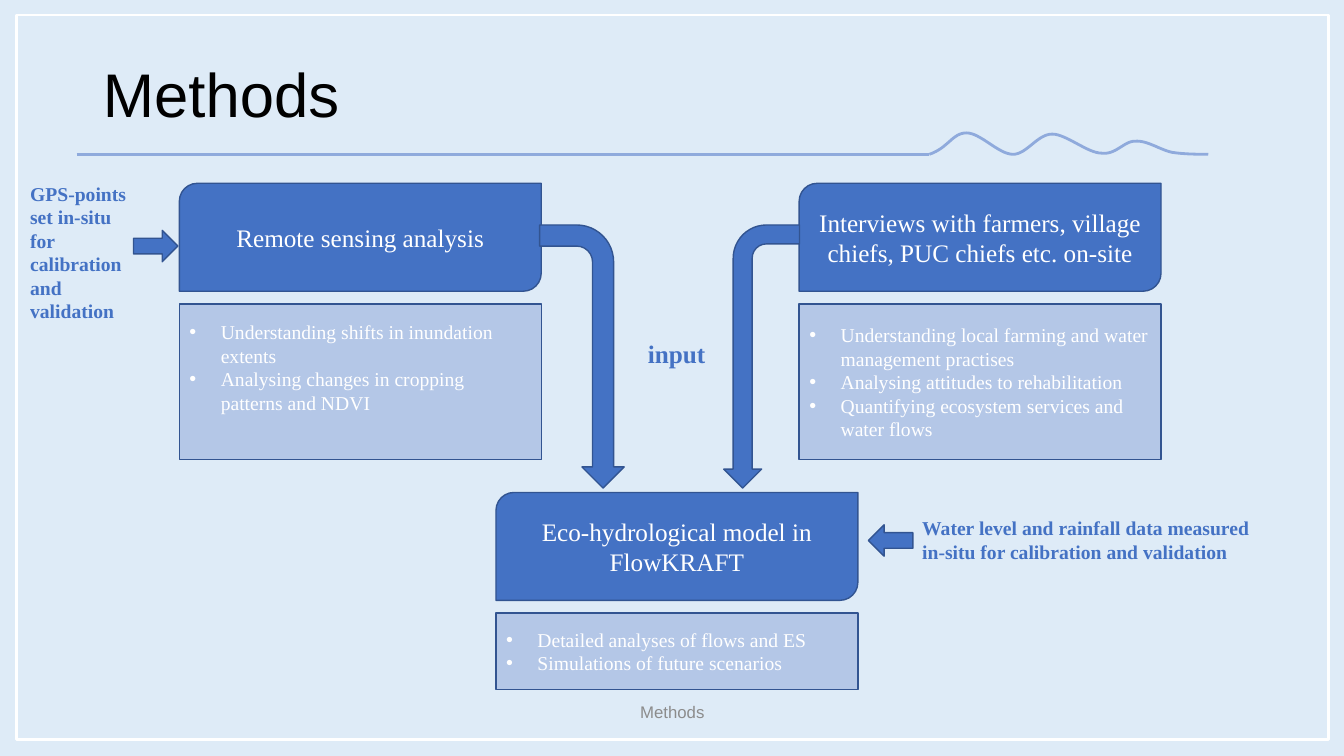
from dataclasses import dataclass

from lxml.etree import SubElement
from pptx import Presentation
from pptx.dml.color import RGBColor
from pptx.enum.shapes import MSO_CONNECTOR, MSO_SHAPE
from pptx.enum.text import MSO_ANCHOR, MSO_AUTO_SIZE, PP_ALIGN
from pptx.oxml.ns import qn
from pptx.util import Cm, Pt

PAPER = RGBColor(0xDE, 0xEB, 0xF7)
WHITE = RGBColor(0xFF, 0xFF, 0xFF)
BLACK = RGBColor(0x00, 0x00, 0x00)
GREY = RGBColor(0x8C, 0x8C, 0x8C)
BLUE = RGBColor(0x44, 0x72, 0xC4)
PALE = RGBColor(0xB4, 0xC7, 0xE7)
EDGE = RGBColor(0x32, 0x54, 0x91)
RULE = RGBColor(0x8F, 0xAA, 0xDC)
SERIF, SANS = "Times New Roman", "Arial"

BOX_W, BOX_H, STEP = 9.12, 2.72, 3.04  # STEP: from top of a box to its list
INDENT = Cm(0.79)


@dataclass
class Stage:
    left: float
    top: float
    name: str
    tall: float
    items: list[str]
    foot: float = 0.13  # bottom inset of the list


@dataclass
class Arrow:
    kind: MSO_SHAPE
    at: tuple[float, float, float, float]
    turn: int
    flip: bool = False


@dataclass
class Label:
    at: tuple[float, float, float, float]
    text: str
    size: int = 14
    font: str = SERIF
    color: RGBColor = BLUE
    bold: bool = True
    align: PP_ALIGN = PP_ALIGN.LEFT


STAGES = [
    Stage(4.52, 4.62, "Remote sensing analysis", 3.92,
          ["Understanding shifts in inundation extents",
           "Analysing changes in cropping patterns and NDVI"], foot=0.87),
    Stage(20.14, 4.62, "Interviews with farmers, village chiefs, PUC chiefs etc. on-site", 3.92,
          ["Understanding local farming and water management practises",
           "Analysing attitudes to rehabilitation",
           "Quantifying ecosystem services and water flows"]),
    Stage(12.5, 12.41, "Eco-hydrological model in FlowKRAFT", 1.93,
          ["Detailed analyses of flows and ES", "Simulations of future scenarios"]),
]
ARROWS = [
    Arrow(MSO_SHAPE.BENT_ARROW, (11.35, 7.92, 6.63, 2.13), 90),
    Arrow(MSO_SHAPE.BENT_ARROW, (15.88, 8.03, 6.63, 1.91), 90, flip=True),
    Arrow(MSO_SHAPE.DOWN_ARROW, (22.05, 13.06, 0.79, 1.12), 90),
    Arrow(MSO_SHAPE.DOWN_ARROW, (3.53, 5.64, 0.79, 1.12), 270),
]
LABELS = [
    Label((16.08, 8.41, 2.11, 1.02), "input", 18),
    Label((22.99, 12.88, 9.07, 2.06),
          "Water level and rainfall data measured in-situ for calibration and validation"),
    Label((0.51, 4.45, 3.02, 3.84), "GPS-points set in-situ for calibration and validation"),
    Label((11.23, 17.55, 11.43, 1.02), "Methods", 12, SANS, GREY, False, PP_ALIGN.CENTER),
]
# Start of the wave, then two control points and an end for each curve
WAVE = [
    (23.42, 3.89),
    (23.9, 3.73), (24.0, 3.35), (24.36, 3.35),
    (24.71, 3.35), (25.17, 3.89), (25.53, 3.89),
    (25.88, 3.89), (26.14, 3.38), (26.52, 3.38),
    (26.87, 3.38), (27.41, 3.86), (27.76, 3.86),
    (28.12, 3.91), (28.32, 3.56), (28.6, 3.56),
    (28.91, 3.53), (29.24, 3.78), (29.54, 3.84),
    (29.85, 3.89), (30.28, 3.89), (30.45, 3.89),
]


def write(frame, *lines: str, size: int = 18, font: str = SERIF, color: RGBColor = WHITE,
          bold: bool = False, align: PP_ALIGN = PP_ALIGN.LEFT,
          anchor: MSO_ANCHOR = MSO_ANCHOR.TOP, space: float = 1.0,
          bullet: bool = False) -> None:
    frame.word_wrap = True
    frame.auto_size = MSO_AUTO_SIZE.NONE
    frame.vertical_anchor = anchor
    for num, line in enumerate(lines):
        para = frame.add_paragraph() if num else frame.paragraphs[0]
        para.alignment = align
        para.line_spacing = space
        para.space_before = Pt(0)
        run = para.add_run()
        run.text = line
        run.font.size, run.font.name, run.font.bold = Pt(size), font, bold
        run.font.color.rgb = color
        if bullet:
            props = para._p.get_or_add_pPr()
            props.set("marL", str(INDENT))
            props.set("indent", str(-INDENT))
            SubElement(props, qn("a:buFont")).set("typeface", SANS)
            SubElement(props, qn("a:buChar")).set("char", "•")


def place(shape, left: float, top: float, wide: float, tall: float) -> None:
    shape.left, shape.top = Cm(left), Cm(top)
    shape.width, shape.height = Cm(wide), Cm(tall)


def paint(shape, fill: RGBColor | None, line: RGBColor = EDGE, width: float = 1) -> None:
    if fill is None:
        shape.fill.background()
    else:
        shape.fill.solid()
        shape.fill.fore_color.rgb = fill
    shape.line.color.rgb = line
    shape.line.width = Pt(width)


def add(slide, kind: MSO_SHAPE, at: tuple[float, float, float, float]):
    shape = slide.shapes.add_shape(kind, *map(Cm, at))
    shape.shadow.inherit = False
    return shape


def curve(nodes: list[tuple[float, float]], steps: int = 16) -> list[tuple[int, int]]:
    """Points along a chain of cubic curves."""
    spots = []
    for base in range(0, len(nodes) - 1, 3):
        part = nodes[base:base + 4]
        for step in range(1, steps + 1):
            t = step / steps
            rates = ((1 - t) ** 3, 3 * t * (1 - t) ** 2, 3 * t * t * (1 - t), t ** 3)
            x, y = (sum(r * n[axis] for r, n in zip(rates, part)) for axis in (0, 1))
            spots.append((Cm(x), Cm(y)))
    return spots


def draw_rule(slide) -> None:
    x, y = map(Cm, WAVE[0])
    line = slide.shapes.add_connector(MSO_CONNECTOR.STRAIGHT, Cm(1.93), y, x, y)
    line.line.color.rgb = RULE
    line.line.width = Pt(2.25)
    SubElement(line._element.spPr, qn("a:effectLst"))
    path = slide.shapes.build_freeform(x, y)
    path.add_line_segments(curve(WAVE), close=False)
    wave = path.convert_to_shape()
    wave.shadow.inherit = False
    paint(wave, None, RULE, 2)


def draw_stage(slide, stage: Stage, body) -> None:
    box = add(slide, MSO_SHAPE.ROUND_2_DIAG_RECTANGLE, (stage.left, stage.top, BOX_W, BOX_H))
    paint(box, BLUE)
    write(box.text_frame, stage.name, align=PP_ALIGN.CENTER, anchor=MSO_ANCHOR.MIDDLE)
    place(body, stage.left, stage.top + STEP, BOX_W, stage.tall)
    paint(body, PALE)
    body.text_frame.margin_bottom = Cm(stage.foot)
    write(body.text_frame, *stage.items, size=14, anchor=MSO_ANCHOR.MIDDLE, bullet=True)


def draw_arrow(slide, arrow: Arrow) -> None:
    shape = add(slide, arrow.kind, arrow.at)
    paint(shape, BLUE)
    shape.rotation = arrow.turn
    if arrow.flip:
        shape._element.spPr.find(qn("a:xfrm")).set("flipV", "1")


def draw_label(slide, label: Label) -> None:
    box = slide.shapes.add_textbox(*map(Cm, label.at))
    write(box.text_frame, label.text, size=label.size, font=label.font,
          color=label.color, bold=label.bold, align=label.align)


def main() -> None:
    deck = Presentation()
    deck.slide_width, deck.slide_height = Cm(33.87), Cm(19.05)
    slide = deck.slides.add_slide(deck.slide_layouts[4])
    slide.background.fill.solid()
    slide.background.fill.fore_color.rgb = PAPER

    # Title, frame and rule
    title, *bodies = slide.placeholders
    place(title, 2.34, 1.5, 29.21, 3.68)
    write(title.text_frame, "Methods", size=44, font=SANS, color=BLACK, space=0.9)
    paint(add(slide, MSO_SHAPE.RECTANGLE, (0.41, 0.38, 33.07, 18.26)), None, WHITE, 2)
    draw_rule(slide)

    # Stages with their lists
    for stage, body in zip(STAGES, bodies):
        draw_stage(slide, stage, body)
    for spare in bodies[len(STAGES):]:
        spare._element.getparent().remove(spare._element)

    # Arrows and labels
    for arrow in ARROWS:
        draw_arrow(slide, arrow)
    for label in LABELS:
        draw_label(slide, label)
    deck.save("out.pptx")


if __name__ == "__main__":
    main()
